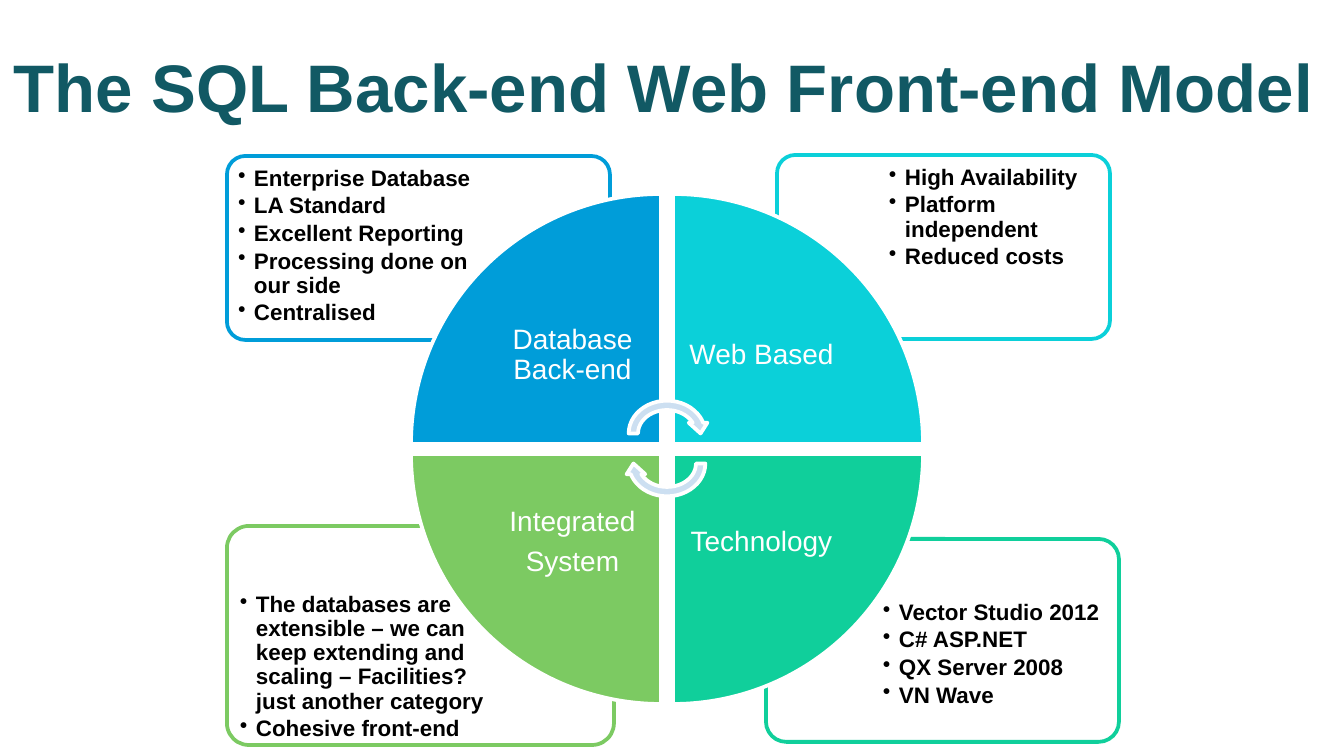
from dataclasses import dataclass

from lxml import etree
from pptx import Presentation
from pptx.dml.color import RGBColor
from pptx.enum.shapes import MSO_SHAPE
from pptx.enum.text import MSO_ANCHOR, MSO_AUTO_SIZE, PP_ALIGN
from pptx.oxml.ns import qn
from pptx.util import Emu, Pt

ROUND = MSO_SHAPE.ROUNDED_RECTANGLE
WEDGE = MSO_SHAPE.PIE_WEDGE
ARROW = MSO_SHAPE.CIRCULAR_ARROW
LEFT, CENTER = PP_ALIGN.LEFT, PP_ALIGN.CENTER
TOP, MIDDLE = MSO_ANCHOR.TOP, MSO_ANCHOR.MIDDLE
NO_FIT = MSO_AUTO_SIZE.NONE

WIDTH, HEIGHT = 1344, 756
SCALE = 9144000 / WIDTH


@dataclass(frozen=True)
class Theme:
    font: str = "Arial"
    title: str = "115964"
    ink: str = "000000"
    white: str = "FFFFFF"
    arrow: str = "CCDFF1"
    blue: str = "009DD9"
    cyan: str = "0BD0D9"
    teal: str = "10CF9B"
    green: str = "7CCA62"
    big: int = 36
    mid: int = 15
    small: int = 12
    line: int = 2


THEME = Theme()

# Wheel: left and top of the wedges, and their side
COLS, ROWS, SIDE = (411, 673), (194, 454), 250
LABEL = 177

# Column, row, turn, colour, label lines
PARTS = [
    (0, 0, 0, THEME.blue, ["Database Back-end"]),
    (1, 0, 90, THEME.cyan, ["Web Based"]),
    (1, 1, 180, THEME.teal, ["Technology"]),
    (0, 1, 270, THEME.green, ["Integrated", "System"]),
]

# Frame, text area, colour, bullets
NOTES = [
    ((766, 539, 353, 203), (876, 594, 239, 144), THEME.teal,
     ["Vector Studio 2012", "C# ASP.NET", "QX Server 2008", "VN Wave"]),
    ((227, 526, 387, 219), (233, 586, 262, 155), THEME.green,
     ["The databases are \vextensible – we can \vkeep extending and "
      "scaling – Facilities? just another category",
      "Cohesive front-end"]),
    ((777, 155, 333, 184), (882, 159, 226, 130), THEME.cyan,
     ["High Availability", "Platform independent", "Reduced costs"]),
    ((227, 156, 383, 184), (231, 160, 261, 130), THEME.blue,
     ["Enterprise Database", "LA Standard", "Excellent Reporting",
      "Processing done on our side", "Centralised"]),
]


def px(n):
    return Emu(round(n * SCALE))


def style(para, size, color, bold=False):
    font = para.font
    font.name, font.size, font.bold = THEME.font, Pt(size), bold
    font.color.rgb = RGBColor.from_string(color)


def add_form(slide, kind, box, fill, line, turn=0):
    form = slide.shapes.add_shape(kind, *map(px, box))
    form.shadow.inherit = False
    form.rotation = turn
    form.fill.solid()
    form.fill.fore_color.rgb = RGBColor.from_string(fill)
    form.line.color.rgb = RGBColor.from_string(line)
    form.line.width = Pt(THEME.line)
    return form


def add_text(slide, box, lines, inset, anchor, after):
    """Add a text box and return its paragraphs."""
    frame = slide.shapes.add_textbox(*map(px, box)).text_frame
    frame.word_wrap = True
    frame.vertical_anchor = anchor
    frame.margin_left = frame.margin_right = px(inset)
    frame.margin_top = frame.margin_bottom = px(inset)
    for i, line in enumerate(lines):
        para = frame.add_paragraph() if i else frame.paragraphs[0]
        para.text = line
        para.line_spacing = 0.9
        para.space_after = Pt(after)
    return frame.paragraphs


def add_bullet(para):
    props = para._p.get_or_add_pPr()
    props.set("marL", str(px(16)))
    props.set("indent", str(px(-16)))
    etree.SubElement(props, qn("a:buChar")).set("char", "•")


def add_title(slide, text):
    title = slide.shapes.title
    title.left, title.top, title.width, title.height = map(
        px, (0, 51, WIDTH, 70))
    frame = title.text_frame
    frame.text = text
    frame.auto_size = NO_FIT
    frame.vertical_anchor = MIDDLE
    para = frame.paragraphs[0]
    para.alignment = LEFT
    style(para, THEME.big, THEME.title, True)


def add_note(slide, box, area, color, lines):
    form = add_form(slide, ROUND, box, THEME.white, color)
    form.adjustments[0] = 0.1
    tint = form.fill._xPr.find(".//" + qn("a:srgbClr"))
    etree.SubElement(tint, qn("a:alpha")).set("val", "90000")
    for para in add_text(slide, area, lines, 7, TOP, 1.8):
        para.level = 1
        add_bullet(para)
        style(para, THEME.small, THEME.ink, True)


def add_part(slide, col, row, turn, color, lines):
    x, y = COLS[col], ROWS[row]
    add_form(slide, WEDGE, (x, y, SIDE, SIDE), color, THEME.white, turn)
    # The label sits in the corner nearest the centre
    gap = SIDE - LABEL
    area = (x + gap * (1 - col), y + gap * (1 - row), LABEL, LABEL)
    for para in add_text(slide, area, lines, 16, MIDDLE, 5.25):
        para.alignment = CENTER
        style(para, THEME.mid, THEME.white)


def main():
    deck = Presentation()
    deck.slide_width, deck.slide_height = px(WIDTH), px(HEIGHT)
    slide = deck.slides.add_slide(deck.slide_layouts[5])
    add_title(slide, "The SQL Back-end Web Front-end Model")

    # Corner notes lie behind the wheel
    for note in NOTES:
        add_note(slide, *note)
    for part in PARTS:
        add_part(slide, *part)

    # Arrows at the hub
    for top, turn in ((396, 0), (426, 180)):
        add_form(slide, ARROW, (624, top, 86, 75), THEME.arrow,
                 THEME.white, turn)
    deck.save("out.pptx")


if __name__ == "__main__":
    main()
